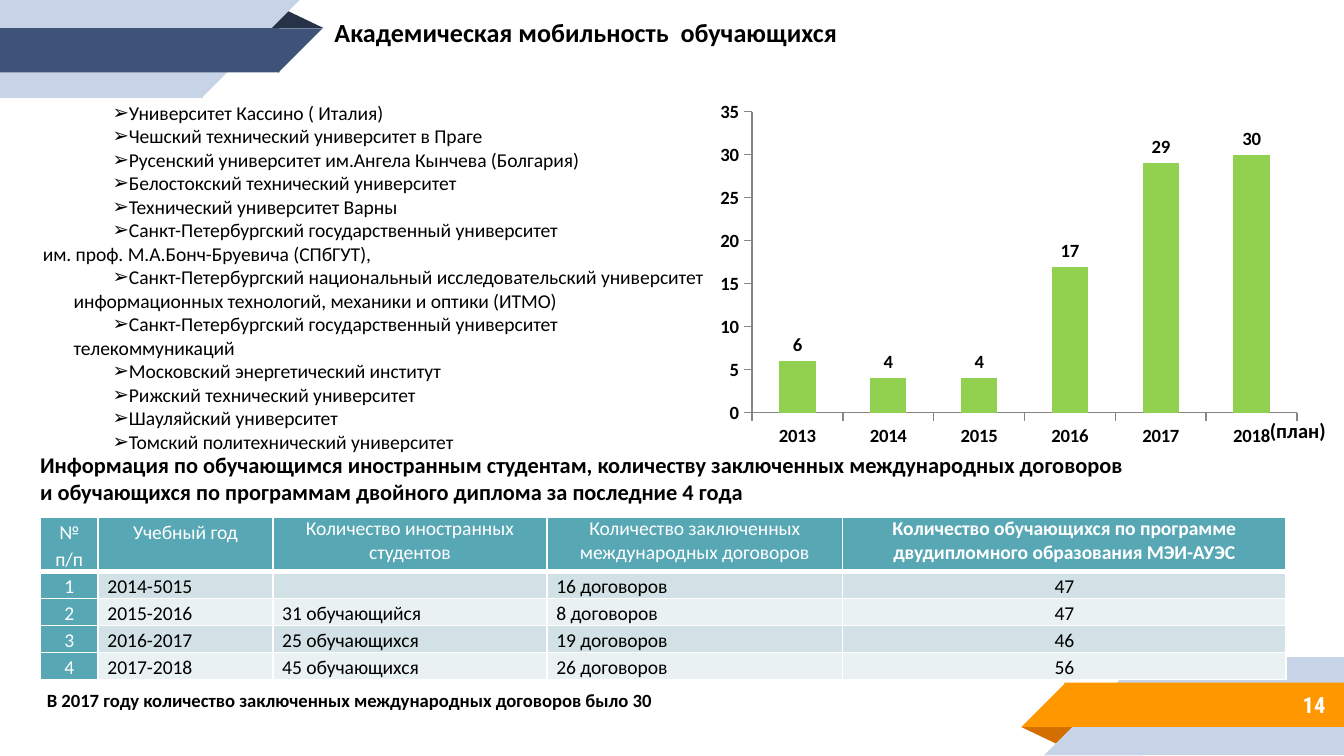
import pptx
import pptx.chart.data
import pptx.dml.color
import pptx.enum.chart
import pptx.enum.shapes
import pptx.enum.text
import pptx.oxml.ns
import pptx.util
from lxml import etree

Inches = pptx.util.Inches
Pt = pptx.util.Pt
SHAPE = pptx.enum.shapes.MSO_SHAPE
ALIGN = pptx.enum.text.PP_ALIGN
ANCHOR = pptx.enum.text.MSO_ANCHOR
qn = pptx.oxml.ns.qn

BLACK, WHITE, TEAL, PALE, GREEN = "000000", "FFFFFF", "57A7B5", "C7D3E6", "92D050"
ORANGE, NAVY = "FF9800", "3F5378"

DECOR = [
    (SHAPE.ISOSCELES_TRIANGLE, 7.6, 5.41, 0.43, 0.14, "D26F00", 180, False),
    (SHAPE.RECTANGLE, 8.49, 4.89, 1.51, 0.73, PALE, 0, False),
    (SHAPE.RIGHT_TRIANGLE, 7.77, 4.89, 0.73, 0.73, PALE, 0, True),
    (SHAPE.RECTANGLE, 7.92, 5.08, 2.08, 0.33, ORANGE, 0, False),
    (SHAPE.RIGHT_TRIANGLE, 7.6, 5.08, 0.33, 0.33, ORANGE, 0, True),
    (SHAPE.ISOSCELES_TRIANGLE, 1.98, 0.07, 0.43, 0.14, "263248", 0, False),
    (SHAPE.RECTANGLE, 0, 0, 1.51, 0.73, PALE, 0, False),
    (SHAPE.RIGHT_TRIANGLE, 1.5, 0, 0.73, 0.73, PALE, 180, True),
    (SHAPE.RECTANGLE, 0, 0.21, 2.08, 0.33, NAVY, 0, False),
    (SHAPE.RIGHT_TRIANGLE, 2.07, 0.21, 0.33, 0.33, NAVY, 180, True),
]

TITLE = "Академическая мобильность  обучающихся"
CONTINUATION = "им. проф. М.А.Бонч-Бруевича (СПбГУТ),"
UNIVERSITIES = [
    "Университет Кассино ( Италия)",
    "Чешский технический университет в Праге",
    "Русенский университет им.Ангела Кынчева (Болгария)",
    "Белостокский технический университет",
    "Технический университет Варны",
    "Санкт-Петербургский государственный университет",
    CONTINUATION,
    "Санкт-Петербургский национальный исследовательский университет "
    "информационных технологий, механики и оптики (ИТМО)",
    "Санкт-Петербургский государственный университет телекоммуникаций",
    "Московский энергетический институт",
    "Рижский технический университет",
    "Шауляйский университет",
    "Томский политехнический университет",
]
TABLE_HEADING = [
    "Информация по обучающимся иностранным студентам, количеству заключенных международных договоров",
    "и обучающихся по программам двойного диплома за последние 4 года",
]
TABLE_ROWS = [
    ("№ п/п", "Учебный год", "Количество иностранных студентов",
     "Количество заключенных международных договоров",
     "Количество обучающихся по программе двудипломного образования МЭИ-АУЭС"),
    ("1", "2014-5015", "", "16 договоров", "47"),
    ("2", "2015-2016", "31 обучающийся", "8 договоров", "47"),
    ("3", "2016-2017", "25 обучающихся", "19 договоров", "46"),
    ("4", "2017-2018", "45 обучающихся", "26 договоров", "56"),
]
COLUMN_WIDTHS = [0.43, 1.3, 2.04, 2.2, 3.3]
ROW_HEIGHTS = [0.4] + [0.2] * 4
FOOTNOTE = "В 2017 году количество заключенных международных договоров было 30"
STUDENTS = {"2013": 6, "2014": 4, "2015": 4, "2016": 17, "2017": 29, "2018": 30}


def rgb(value):
    return pptx.dml.color.RGBColor.from_string(value)


def style_font(font, size, color=BLACK, bold=False, name="Calibri"):
    font.size, font.bold, font.name = Pt(size), bold, name
    font.color.rgb = rgb(color)


def write(paragraph, text, align=ALIGN.LEFT, spacing=None, bullet=None, **font):
    paragraph.alignment = align
    if spacing:
        paragraph.line_spacing = spacing
    if bullet:
        properties = paragraph._p.get_or_add_pPr()
        properties.set("marL", str(Inches(0.23)))
        properties.set("indent", str(Inches(0.29)))
        etree.SubElement(properties, qn("a:buFont")).set("typeface", "Arial")
        etree.SubElement(properties, qn("a:buChar")).set("char", bullet)
    if text:
        run = paragraph.add_run()
        run.text = text
        style_font(run.font, **font)
    else:
        end = etree.SubElement(paragraph._p, qn("a:endParaRPr"))
        end.set("sz", str(int(font["size"] * 100)))


def add_text(slide, lines, left, top, width, height, anchor=ANCHOR.TOP, bullets=(), **style):
    box = slide.shapes.add_textbox(Inches(left), Inches(top), Inches(width), Inches(height))
    frame = box.text_frame
    frame.word_wrap = True
    frame.vertical_anchor = anchor
    for i, line in enumerate(lines):
        paragraph = frame.add_paragraph() if i else frame.paragraphs[0]
        write(paragraph, line, bullet="➢" if line in bullets else None, **style)


def add_decor(slide):
    for kind, left, top, width, height, color, rotation, flipped in DECOR:
        part = slide.shapes.add_shape(kind, Inches(left), Inches(top), Inches(width), Inches(height))
        part.shadow.inherit = False
        part.fill.solid()
        part.fill.fore_color.rgb = rgb(color)
        part.line.fill.background()
        part.rotation = rotation
        if kind == SHAPE.ISOSCELES_TRIANGLE:
            part.adjustments[0] = 0.32
        if flipped:
            part._element.spPr.get_or_add_xfrm().set("flipH", "1")


def set_borders(cell, widths):
    properties = cell._tc.get_or_add_tcPr()
    for i, (side, width) in enumerate(widths.items()):
        line = etree.Element(qn(f"a:ln{side}"), w=str(Pt(width)))
        fill = etree.SubElement(line, qn("a:solidFill"))
        etree.SubElement(fill, qn("a:srgbClr")).set("val", WHITE)
        properties.insert(i, line)


def add_contracts(slide):
    table = slide.shapes.add_table(
        len(TABLE_ROWS), len(COLUMN_WIDTHS), Inches(0.3), Inches(3.85),
        Inches(sum(COLUMN_WIDTHS)), Inches(sum(ROW_HEIGHTS))).table
    for column, width in zip(table.columns, COLUMN_WIDTHS):
        column.width = Inches(width)
    last = len(COLUMN_WIDTHS) - 1
    for r, values in enumerate(TABLE_ROWS):
        table.rows[r].height = Inches(ROW_HEIGHTS[r])
        for c, value in enumerate(values):
            cell = table.cell(r, c)
            header = r == 0
            accent = header or c == 0
            cell.margin_left = cell.margin_right = Inches(0.07)
            cell.margin_top = cell.margin_bottom = 0
            cell.fill.solid()
            cell.fill.fore_color.rgb = rgb(TEAL if accent else "D1E1E5" if r % 2 else "EAF1F3")
            set_borders(cell, {"L": 1, "R": 1, "T": 1, "B": 3 if header else 1})
            write(cell.text_frame.paragraphs[0], value, size=10.5,
                  color=WHITE if accent else BLACK, bold=header and c == last,
                  align=ALIGN.CENTER if accent or c == last else ALIGN.LEFT,
                  spacing=None if header and c > 1 else 1.15)


def add_students(slide):
    data = pptx.chart.data.CategoryChartData()
    data.categories = list(STUDENTS)
    data.add_series("Series 1", list(STUDENTS.values()))
    chart = slide.shapes.add_chart(
        pptx.enum.chart.XL_CHART_TYPE.COLUMN_CLUSTERED,
        Inches(5.27), Inches(0.7), Inches(4.47), Inches(2.68), data).chart
    chart.has_legend = chart.has_title = False
    style_font(chart.font, 10, name="Arial")
    for axis in (chart.category_axis, chart.value_axis):
        axis.has_major_gridlines = False
        axis.major_tick_mark = pptx.enum.chart.XL_TICK_MARK.OUTSIDE
        axis.format.line.color.rgb = rgb("868686")
        style_font(axis.tick_labels.font, 10, bold=True)
    chart.value_axis.minimum_scale = 0
    chart.value_axis.maximum_scale = 35
    chart.value_axis.major_unit = 5
    plot = chart.plots[0]
    plot.gap_width = 150
    plot.vary_by_categories = False
    columns = plot.series[0]
    columns.format.fill.solid()
    columns.format.fill.fore_color.rgb = rgb(GREEN)
    labels = columns.data_labels
    labels.show_value = True
    labels.position = pptx.enum.chart.XL_LABEL_POSITION.OUTSIDE_END
    style_font(labels.font, 10, bold=True)


def main():
    deck = pptx.Presentation()
    deck.slide_width = Inches(10)
    deck.slide_height = deck.slide_width * 9 // 16
    slide = deck.slides.add_slide(deck.slide_layouts[6])
    add_decor(slide)
    add_text(slide, ["14"], 8.33, 5.07, 1.63, 0.35, anchor=ANCHOR.MIDDLE, align=ALIGN.RIGHT,
             size=12, color=WHITE, bold=True, name="Roboto Condensed")
    add_text(slide, [TITLE], 2.39, 0.07, 4.96, 0.34, size=14, bold=True)
    add_text(slide, UNIVERSITIES, 0.22, 0.7, 5.23, 2.57, size=10.5,
             bullets=[name for name in UNIVERSITIES if name != CONTINUATION])
    add_text(slide, TABLE_HEADING, 0.2, 3.31, 8.46, 0.5, size=12, bold=True)
    add_contracts(slide)
    add_text(slide, [FOOTNOTE], 0.25, 5.08, 5.55, 0.27, size=10, bold=True)
    add_students(slide)
    add_text(slide, ["(план)"], 9.35, 3.06, 0.77, 0.29, size=11, bold=True)
    deck.save("out.pptx")


if __name__ == "__main__":
    main()
